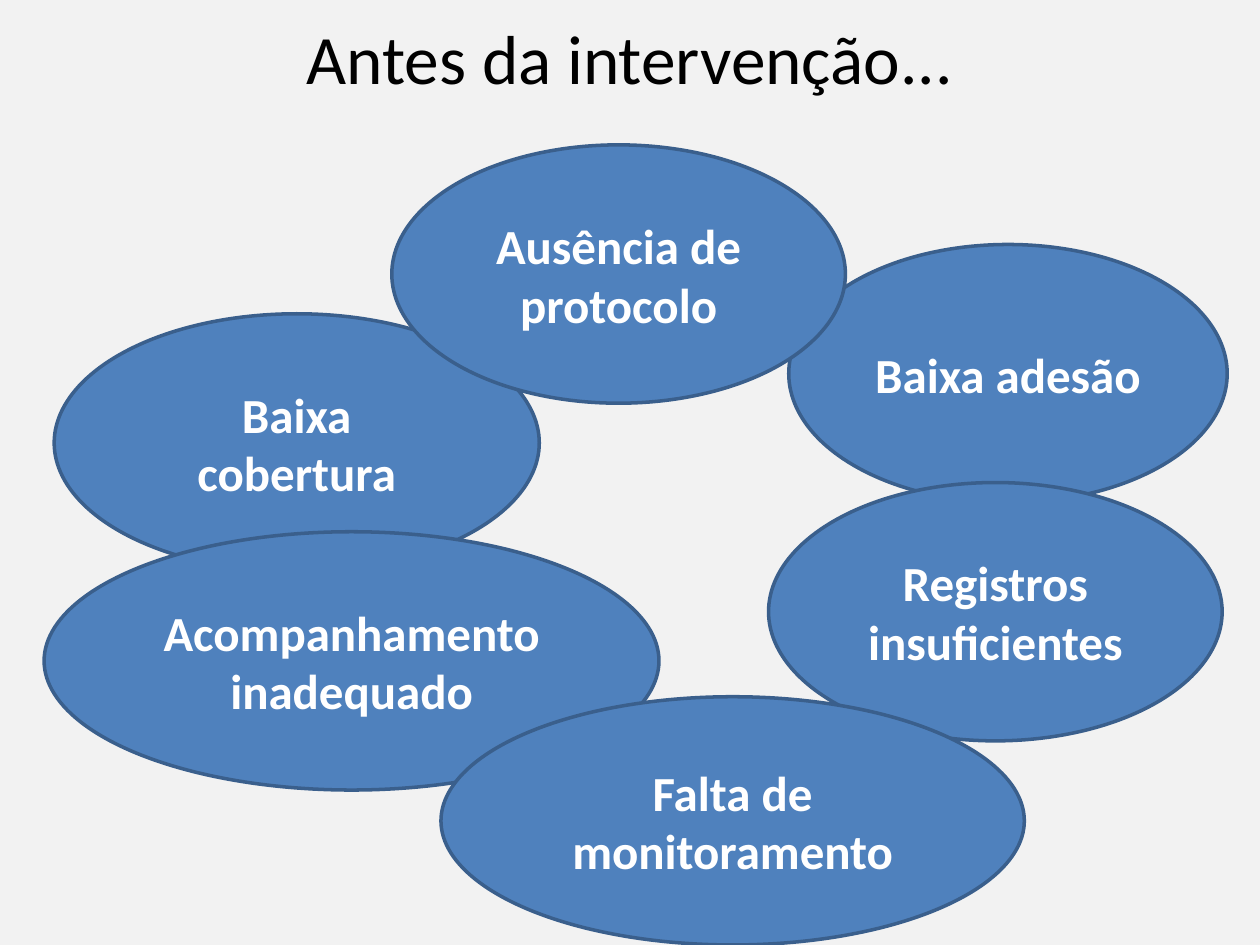
from dataclasses import dataclass

from pptx import Presentation
from pptx.dml.color import RGBColor
from pptx.enum.shapes import MSO_SHAPE
from pptx.enum.text import MSO_ANCHOR, PP_ALIGN
from pptx.util import Inches, Pt


@dataclass(frozen=True)
class Theme:
    font: str = "Calibri"
    back: str = "F2F2F2"
    fill: str = "4F81BD"
    edge: str = "3A5F8C"
    dark: str = "000000"
    light: str = "FFFFFF"
    head: float = 39.6
    body: float = 28
    line: float = 2


THEME = Theme()
TALL = 2.05

# Problems from back to front: text, left, top, width, height
ISSUES = [
    ("Baixa adesão", 6.26, 1.94, 3.48, TALL),
    ("Baixa cobertura", 0.43, 2.49, 3.85, TALL),
    ("Registros insuficientes", 6.1, 3.83, 3.6, TALL),
    ("Acompanhamento inadequado", 0.35, 4.22, 4.88, TALL),
    ("Falta de monitoramento", 3.5, 5.53, 4.63, 1.97),
    ("Ausência de protocolo", 3.11, 1.15, 3.6, TALL),
]


def color(code):
    return RGBColor.from_string(code)


def write(shape, text, size, code, bold=False):
    frame = shape.text_frame
    frame.word_wrap = True
    frame.vertical_anchor = MSO_ANCHOR.MIDDLE
    frame.margin_left = frame.margin_right = Inches(0.12)
    para = frame.paragraphs[0]
    para.text = text
    para.alignment = PP_ALIGN.CENTER
    font = para.font
    font.name = THEME.font
    font.size = Pt(size)
    font.bold = bold
    font.color.rgb = color(code)


def add_title(slide, text):
    box = slide.shapes.add_textbox(
        Inches(0.5), Inches(0.05), Inches(9), Inches(0.8))
    write(box, text, THEME.head, THEME.dark)


def add_issue(slide, text, *place):
    oval = slide.shapes.add_shape(MSO_SHAPE.OVAL, *map(Inches, place))
    oval.shadow.inherit = False
    oval.fill.solid()
    oval.fill.fore_color.rgb = color(THEME.fill)
    oval.line.color.rgb = color(THEME.edge)
    oval.line.width = Pt(THEME.line)
    write(oval, text, THEME.body, THEME.light, bold=True)


def main():
    # Slide and background
    deck = Presentation()
    deck.slide_width, deck.slide_height = Inches(10), Inches(7.5)
    slide = deck.slides.add_slide(deck.slide_layouts[6])
    slide.background.fill.solid()
    slide.background.fill.fore_color.rgb = color(THEME.back)

    # Title and ring of ovals
    add_title(slide, "Antes da intervenção...")
    for issue in ISSUES:
        add_issue(slide, *issue)

    deck.save("out.pptx")


if __name__ == "__main__":
    main()
